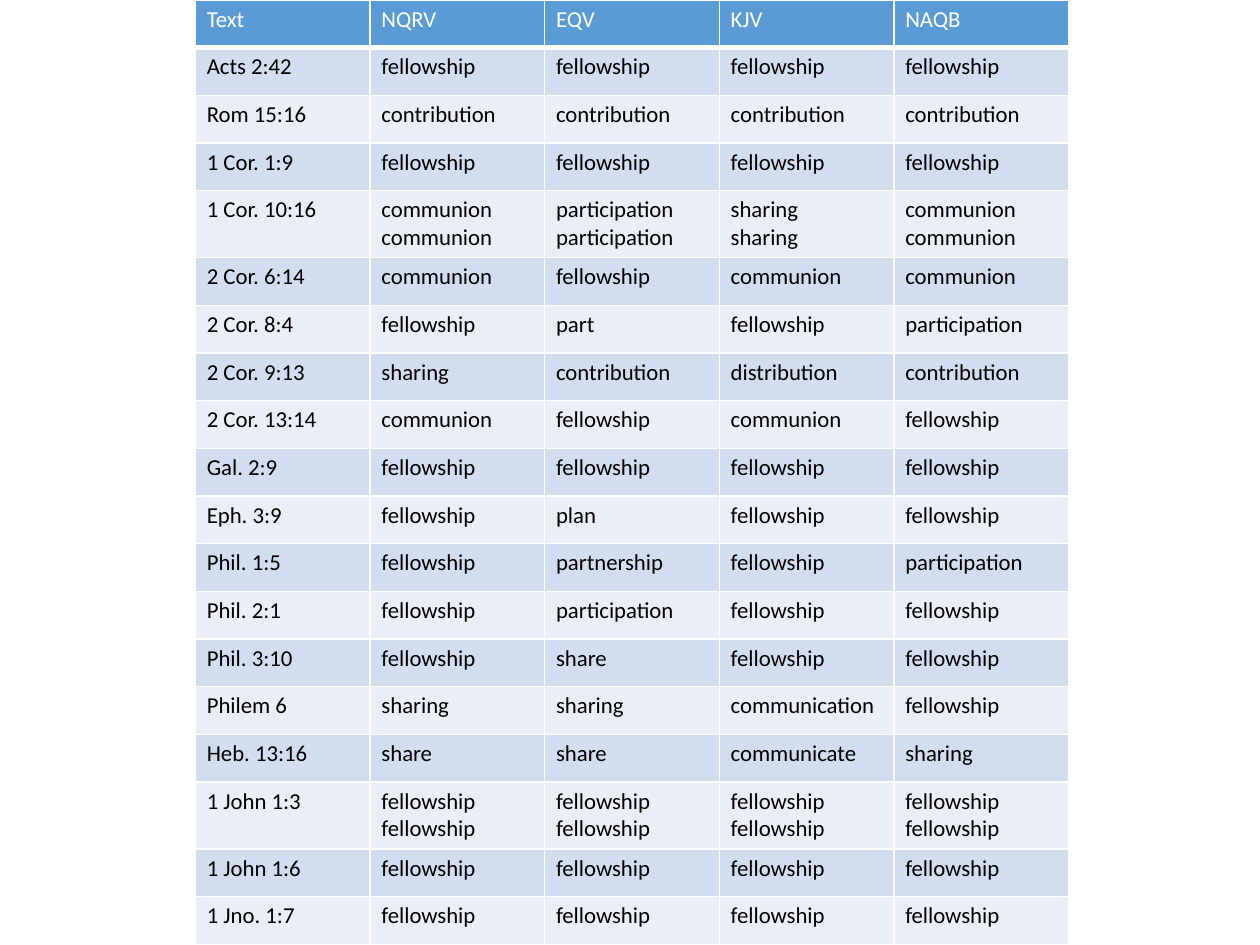
from dataclasses import dataclass

import pptx
import pptx.dml.color
import pptx.oxml
import pptx.oxml.ns
import pptx.table
import pptx.util
from pptx.util import Cm


@dataclass(frozen=True)
class Theme:
    font: str = "Calibri"
    size: float = 13
    header_text: str = "FFFFFF"
    body_text: str = "000000"
    header_fill: str = "5B9BD5"
    bands: tuple[str, str] = ("D2DEEF", "EAEFF7")
    rule: str = "FFFFFF"
    thin: float = 1
    thick: float = 3


@dataclass(frozen=True)
class Verse:
    """A passage and its word, or words one per line, in each translation."""
    text: str
    nqrv: str
    eqv: str
    kjv: str
    naqb: str

    def cells(self) -> tuple[str, ...]:
        return self.text, self.nqrv, self.eqv, self.kjv, self.naqb

    def is_tall(self) -> bool:
        return any("\n" in words for words in self.cells())


THEME = Theme()
SLIDE_W, SLIDE_H = Cm(25.4), Cm(19.05)
TABLE_LEFT, COLUMN_W, TALL_ROW_H = Cm(3.94), Cm(3.52), Cm(1.35)
MARGIN_X, MARGIN_Y = Cm(0.23), Cm(0.11)

HEADER = ("Text", "NQRV", "EQV", "KJV", "NAQB")
VERSES = [
    Verse("Acts 2:42", "fellowship", "fellowship", "fellowship", "fellowship"),
    Verse("Rom 15:16", "contribution", "contribution", "contribution", "contribution"),
    Verse("1 Cor. 1:9", "fellowship", "fellowship", "fellowship", "fellowship"),
    Verse("1 Cor. 10:16", "communion\ncommunion", "participation\nparticipation",
          "sharing\nsharing", "communion\ncommunion"),
    Verse("2 Cor. 6:14", "communion", "fellowship", "communion", "communion"),
    Verse("2 Cor. 8:4", "fellowship", "part", "fellowship", "participation"),
    Verse("2 Cor. 9:13", "sharing", "contribution", "distribution", "contribution"),
    Verse("2 Cor. 13:14", "communion", "fellowship", "communion", "fellowship"),
    Verse("Gal. 2:9", "fellowship", "fellowship", "fellowship", "fellowship"),
    Verse("Eph. 3:9", "fellowship", "plan", "fellowship", "fellowship"),
    Verse("Phil. 1:5", "fellowship", "partnership", "fellowship", "participation"),
    Verse("Phil. 2:1", "fellowship", "participation", "fellowship", "fellowship"),
    Verse("Phil. 3:10", "fellowship", "share", "fellowship", "fellowship"),
    Verse("Philem 6", "sharing", "sharing", "communication", "fellowship"),
    Verse("Heb. 13:16", "share", "share", "communicate", "sharing"),
    Verse("1 John 1:3", "fellowship\nfellowship", "fellowship\nfellowship",
          "fellowship\nfellowship", "fellowship\nfellowship"),
    Verse("1 John 1:6", "fellowship", "fellowship", "fellowship", "fellowship"),
    Verse("1 Jno. 1:7", "fellowship", "fellowship", "fellowship", "fellowship"),
]


def rgb(color: str) -> pptx.dml.color.RGBColor:
    return pptx.dml.color.RGBColor.from_string(color)


def set_borders(cell: pptx.table._Cell, bottom: float) -> None:
    tc_pr = cell._tc.get_or_add_tcPr()
    widths = {"lnL": THEME.thin, "lnR": THEME.thin, "lnT": THEME.thin, "lnB": bottom}
    for tag, width in widths.items():
        tc_pr.append(pptx.oxml.parse_xml(
            f'<a:{tag} {pptx.oxml.ns.nsdecls("a")} w="{pptx.util.Pt(width)}">'
            f'<a:solidFill><a:srgbClr val="{THEME.rule}"/></a:solidFill></a:{tag}>'))


def fill_cell(cell: pptx.table._Cell, words: str, color: str, fill: str,
              bottom: float) -> None:
    set_borders(cell, bottom)
    cell.fill.solid()
    cell.fill.fore_color.rgb = rgb(fill)
    cell.margin_left = cell.margin_right = MARGIN_X
    cell.margin_top = cell.margin_bottom = MARGIN_Y
    tf = cell.text_frame
    for i, line in enumerate(words.split("\n")):
        p = tf.add_paragraph() if i else tf.paragraphs[0]
        r = p.add_run()
        r.text = line
        r.font.name = THEME.font
        r.font.size = pptx.util.Pt(THEME.size)
        r.font.bold = False
        r.font.color.rgb = rgb(color)


def fill_row(table: pptx.table.Table, index: int, cells: tuple[str, ...],
             color: str, fill: str, bottom: float) -> None:
    for column, words in enumerate(cells):
        fill_cell(table.cell(index, column), words, color, fill, bottom)


def main() -> None:
    prs = pptx.Presentation()
    prs.slide_width, prs.slide_height = SLIDE_W, SLIDE_H
    s = prs.slides.add_slide(prs.slide_layouts[6])

    table = s.shapes.add_table(len(VERSES) + 1, len(HEADER), TABLE_LEFT, 0,
                               COLUMN_W * len(HEADER), SLIDE_H).table
    for column in table.columns:
        column.width = COLUMN_W

    tall = sum(verse.is_tall() for verse in VERSES)
    row_h = (SLIDE_H - tall * TALL_ROW_H) // (len(VERSES) + 1 - tall)
    table.rows[0].height = row_h
    fill_row(table, 0, HEADER, THEME.header_text, THEME.header_fill, THEME.thick)
    for i, verse in enumerate(VERSES):
        table.rows[i + 1].height = TALL_ROW_H if verse.is_tall() else row_h
        fill_row(table, i + 1, verse.cells(), THEME.body_text,
                 THEME.bands[i % 2], THEME.thin)

    prs.save("out.pptx")


if __name__ == "__main__":
    main()
